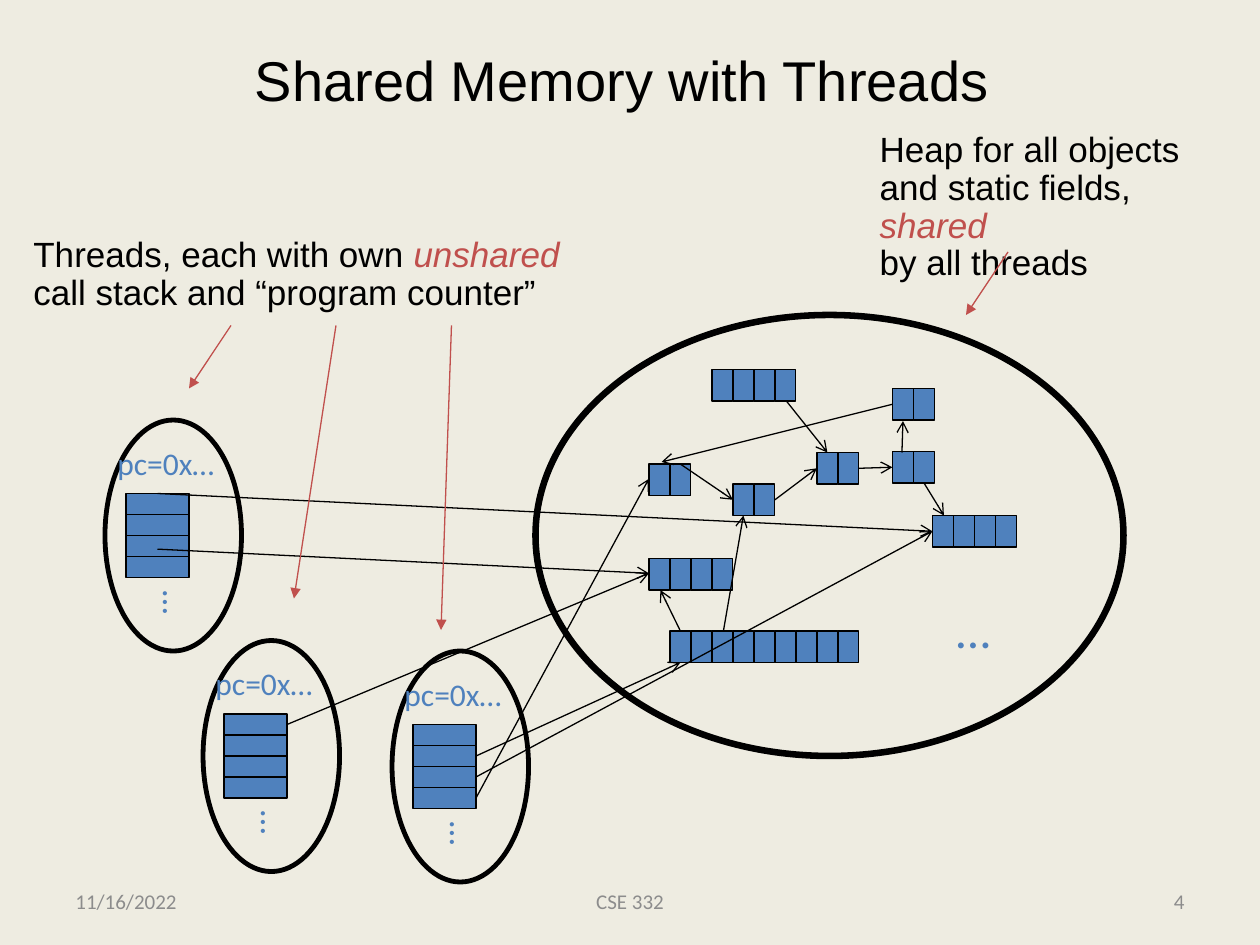
import pptx
import pptx.dml.color
import pptx.enum.shapes
import pptx.enum.text
import pptx.oxml
import pptx.oxml.ns
import pptx.util

# The slide is a grid of 60 columns by 45 rows; every length is in grid units.
COLUMNS, ROWS = 60, 45
WIDTH, HEIGHT = pptx.util.Inches(10), pptx.util.Inches(7.5)
BLACK, BLUE, RED, GREY, CREAM = "000000", "4F81BD", "C0504D", "8C8C8C", "EEECE1"
CELL_WIDTH, CELL_HEIGHT = 1, 1.5
FRAME_WIDTH, FRAME_HEIGHT = 3, 1
SHAPES = pptx.enum.shapes.MSO_SHAPE
ALIGN = pptx.enum.text.PP_ALIGN
ANCHOR = pptx.enum.text.MSO_ANCHOR

# Heap objects: column, row, number of cells
HEAP_OBJECTS = [
    (30.9, 22.1, 2), (30.9, 26.6, 4), (34.9, 23.05, 2), (38.9, 21.55, 2),
    (33.9, 17.6, 4), (44.4, 24.55, 4), (31.9, 30.05, 9),
    (42.5, 21.5, 2), (42.5, 18.5, 2),
]
THREADS = [(5, 20), (9.67, 30.5), (18.67, 31)]

# Arrows: from column and row, to column and row
REFERENCES = [
    # Between heap objects
    (37.45, 19.1, 39.4, 21.55), (32.4, 22.1, 34.9, 23.8),
    (36.9, 23.8, 38.9, 22.3), (32.4, 30.05, 31.45, 28.1),
    (34.45, 30.05, 35.4, 24.55), (40.9, 22.3, 42.5, 22.25),
    (42.95, 21.55, 43, 20.05), (42.5, 19.25, 31.5, 22),
    (44, 23, 44.95, 24.55),
    # From call stacks into the heap
    (7.5, 23.5, 44.4, 25.3), (7.5, 26.15, 30.9, 27.3),
    (13.67, 34.5, 30.9, 27.3), (22.67, 36, 32.4, 31.55),
    (22.67, 38, 30.9, 22.8), (22.67, 37, 44.4, 25.3),
]
POINTERS = [
    (48, 12, 46, 15), (11, 15.5, 9, 18.5),
    (16, 15.5, 14, 28.5), (21.5, 15.5, 21, 30),
]


def col(units):
    return round(units * WIDTH / COLUMNS)


def row(units):
    return round(units * HEIGHT / ROWS)


def box(left, top, width, height):
    return col(left), row(top), col(width), row(height)


def color(hex_string):
    return pptx.dml.color.RGBColor.from_string(hex_string)


def add_outlined(slide, kind, area, weight, fill=None):
    shape = slide.shapes.add_shape(kind, *box(*area))
    shape.shadow.inherit = False
    if fill:
        shape.fill.solid()
        shape.fill.fore_color.rgb = color(fill)
    else:
        shape.fill.background()
    shape.line.color.rgb = color(BLACK)
    shape.line.width = pptx.util.Pt(weight)


def add_run(paragraph, text, size, hex_string, font_name, italic=False):
    run = paragraph.add_run()
    run.text = text
    formats = {"size": pptx.util.Pt(size), "name": font_name, "italic": italic}
    for attribute, value in formats.items():
        setattr(run.font, attribute, value)
    run.font.color.rgb = color(hex_string)


def add_label(slide, area, lines, size, font_name="Calibri", rotation=0):
    """Each line is a list of (text, colour, italic) pieces."""
    label = slide.shapes.add_textbox(*box(*area))
    label.rotation = rotation
    label.text_frame.word_wrap = False
    label.text_frame.auto_size = pptx.enum.text.MSO_AUTO_SIZE.SHAPE_TO_FIT_TEXT
    paragraph = label.text_frame.paragraphs[0]
    paragraph.line_spacing = 0.9
    for number, pieces in enumerate(lines):
        if number:
            paragraph.add_line_break()
        for text, hex_string, italic in pieces:
            add_run(paragraph, text, size, hex_string, font_name, italic)


def add_footer(slide, left, width, text, alignment):
    footer = slide.shapes.add_textbox(*box(left, 41.7, width, 2.4))
    footer.text_frame.word_wrap = True
    footer.text_frame.vertical_anchor = ANCHOR.MIDDLE
    paragraph = footer.text_frame.paragraphs[0]
    paragraph.alignment = alignment
    add_run(paragraph, text, 12, GREY, "Calibri")


def add_arrow(slide, ends, hex_string, head):
    x1, y1, x2, y2 = ends
    arrow = slide.shapes.add_connector(
        pptx.enum.shapes.MSO_CONNECTOR.STRAIGHT, col(x1), row(y1), col(x2), row(y2))
    arrow.line.color.rgb = color(hex_string)
    arrow.line.width = pptx.util.Pt(0.75)
    properties = arrow._element.spPr
    namespace = pptx.oxml.ns.nsdecls("a")
    properties.find(pptx.oxml.ns.qn("a:ln")).append(
        pptx.oxml.parse_xml(f'<a:tailEnd {namespace} type="{head}"/>'))
    properties.append(pptx.oxml.parse_xml(f"<a:effectLst {namespace}/>"))


def add_heap_object(slide, left, top, cells):
    for index in range(cells):
        area = (left + index * CELL_WIDTH, top, CELL_WIDTH, CELL_HEIGHT)
        add_outlined(slide, SHAPES.RECTANGLE, area, 0.75, BLUE)


def add_thread(slide, left, top):
    add_outlined(slide, SHAPES.OVAL, (left, top, 6.5, 11), 2.75)
    for index in range(4):
        area = (left + 1, top + 3.5 + index * FRAME_HEIGHT, FRAME_WIDTH, FRAME_HEIGHT)
        add_outlined(slide, SHAPES.RECTANGLE, area, 0.75, BLUE)
    add_label(slide, (left, top + 1.05, 6.85, 2.4), [[("pc=0x…", BLUE, False)]], 18)
    add_label(slide, (left + 1.72, top + 7.65, 2.9, 2.65),
              [[("…", BLUE, False)]], 20, rotation=90)


def set_title(slide, text):
    title = slide.shapes.title
    title.left, title.top, title.width, title.height = box(4.5, 0, 51, 7.5)
    title.text_frame.vertical_anchor = ANCHOR.MIDDLE
    paragraph = title.text_frame.paragraphs[0]
    paragraph.alignment = ALIGN.CENTER
    add_run(paragraph, text, 32, BLACK, "Arial")


def main():
    deck = pptx.Presentation()
    deck.slide_width, deck.slide_height = WIDTH, HEIGHT
    slide = deck.slides.add_slide(deck.slide_layouts[5])
    slide.background.fill.solid()
    slide.background.fill.fore_color.rgb = color(CREAM)
    set_title(slide, "Shared Memory with Threads ")

    # Heap and its objects
    add_outlined(slide, SHAPES.OVAL, (25.5, 15, 28, 21), 3.75)
    for heap_object in HEAP_OBJECTS:
        add_heap_object(slide, *heap_object)
    add_label(slide, (44.95, 28.55, 3.6, 3.4), [[("…", BLUE, False)]], 28)

    # Explanations
    add_label(slide, (41.3, 6, 18.7, 6.6), [
        [("Heap for all objects ", BLACK, False)],
        [("and static fields, ", BLACK, False), ("shared", RED, True)],
        [("by all threads", BLACK, False)],
    ], 20, "Arial")
    add_label(slide, (1, 11, 27.05, 4.6), [
        [("Threads, each with own ", BLACK, False), ("unshared ", RED, True)],
        [("call stack and “program counter”", BLACK, False)],
    ], 20, "Arial")

    # Threads with their call stacks
    for thread in THREADS:
        add_thread(slide, *thread)

    # Arrows
    for arrows, hex_string, head in ((REFERENCES, BLACK, "arrow"),
                                     (POINTERS, RED, "triangle")):
        for ends in arrows:
            add_arrow(slide, ends, hex_string, head)

    # Footer
    add_footer(slide, 3, 14, "11/16/2022", ALIGN.LEFT)
    add_footer(slide, 20.5, 19, "CSE 332", ALIGN.CENTER)
    add_footer(slide, 43, 14, "4", ALIGN.RIGHT)
    deck.save("out.pptx")


if __name__ == "__main__":
    main()
